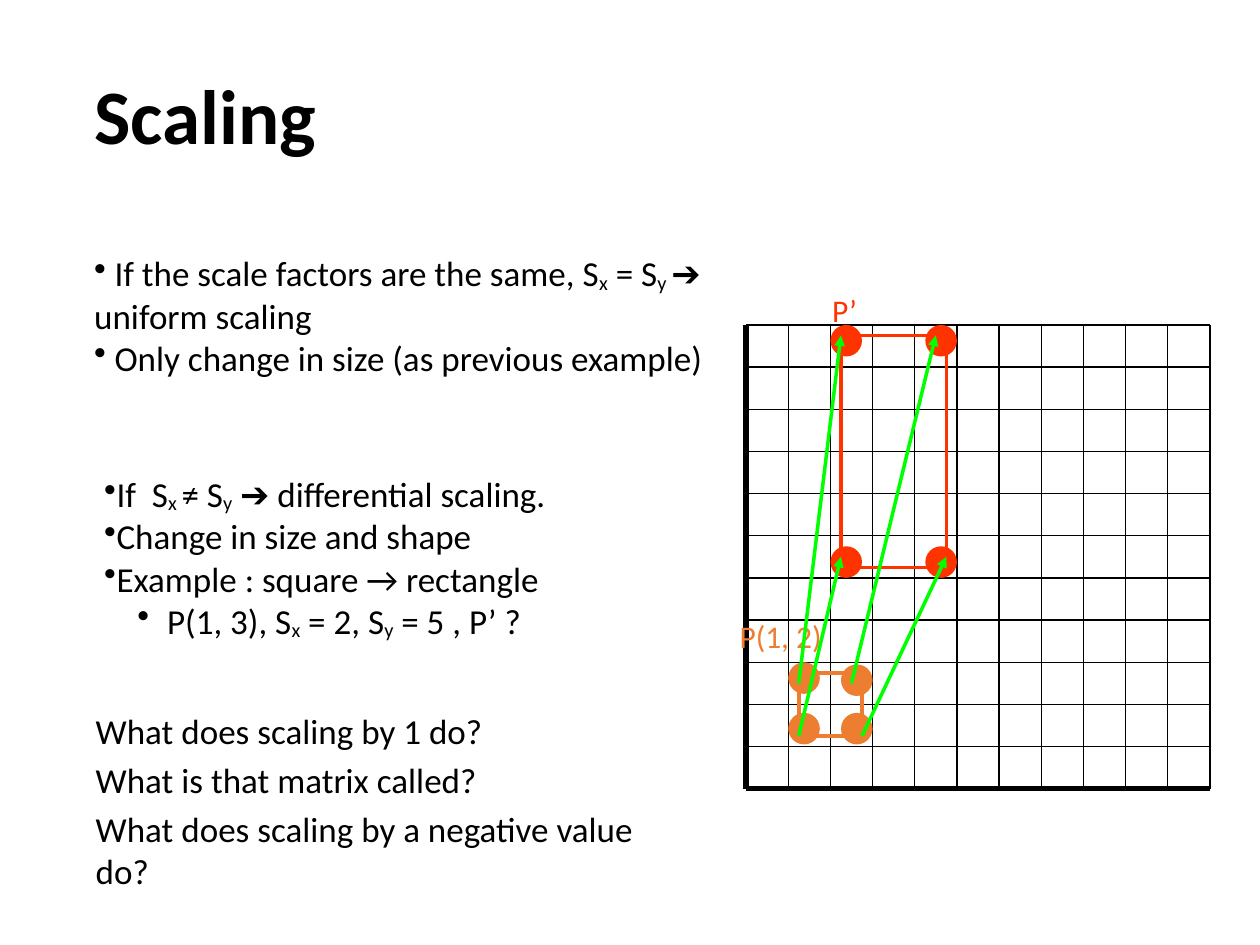
from dataclasses import dataclass

from lxml.etree import SubElement
from pptx import Presentation
from pptx.dml.color import RGBColor
from pptx.enum.shapes import MSO_CONNECTOR, MSO_SHAPE
from pptx.enum.text import MSO_ANCHOR
from pptx.oxml.ns import qn
from pptx.util import Cm, Pt


@dataclass(frozen=True)
class Theme:
    font: str = "Calibri"
    ink: str = "000000"
    before: str = "ED7D31"
    after: str = "FF3300"
    motion: str = "00FF00"
    title_size: int = 44
    body_size: int = 20
    label_size: int = 18
    grid_width: float = 0.75
    axis_width: float = 3
    outline_width: float = 2


THEME = Theme()

# Content: text between ~ marks is subscript; boxes are left, top, width, height in cm
TITLE = ("Scaling", (1.65, 0.71, 21.59, 3.18))
UNIFORM = ([
    " If the scale factors are the same, S~x~ = S~y ~➔ uniform scaling",
    " Only change in size (as previous example)",
], (1.65, 4.95, 13.39, 2.82))
DIFFERENTIAL = ([
    "If  S~x ~≠ S~y~ ➔ differential scaling.",
    "Change in size and shape",
    "Example : square → rectangle",
], (1.85, 9.4, 9.78, 3.68))
EXAMPLE = "P(1, 3), S~x~ = 2, S~y~ = 5 , P’ ?"
QUESTIONS = ([
    "What does scaling by 1 do?",
    "What is that matrix called?",
    "What does scaling by a negative value do?",
], (1.68, 14.17, 12.5, 4.01))

# Diagram: positions in grid cells from the top left corner of the grid
GRID_LEFT, GRID_TOP, CELL, CELLS = 15.04, 6.55, 0.85, 11
DOT = 0.75
FIGURES = [
    dict(label="P(1, 2)", label_box=(-0.45, 6.78, 2.58, 1.2), color=THEME.before,
         dots=[(1, 9.2), (2.25, 9.2), (1, 8), (2.25, 8.05)],
         outline=(1.25, 8.25, 1.5, 1.5)),
    dict(label="P’", label_box=(1.75, -0.96, 1.2, 1.2), color=THEME.after,
         dots=[(2, 5.25), (4.25, 5.25), (2, 0), (4.25, 0)],
         outline=(2.25, 0.25, 2.5, 5.5)),
]
MOTIONS = [
    ((1.25, 8.5), (2.25, 0.25)),
    ((2.75, 9.75), (4.75, 5.5)),
    ((1.25, 9.75), (2.25, 5.5)),
    ((2.5, 8.5), (4.5, 0.25)),
]


def grid_point(column, row):
    return Cm(GRID_LEFT + column * CELL), Cm(GRID_TOP + row * CELL)


def grid_box(column, row, width, height):
    return *grid_point(column, row), Cm(width * CELL), Cm(height * CELL)


def cm_box(box):
    return [Cm(length) for length in box]


def add_text(slide, lines, box, size, color=THEME.ink, bold=False, wrap=True):
    frame = slide.shapes.add_textbox(*box).text_frame
    frame.word_wrap = wrap
    for index, line in enumerate(lines):
        paragraph = frame.paragraphs[0] if index == 0 else frame.add_paragraph()
        font = paragraph.font
        font.name, font.size, font.bold = THEME.font, Pt(size), bold
        font.color.rgb = RGBColor.from_string(color)
        for part, words in enumerate(line.split("~")):
            if words:
                run = paragraph.add_run()
                run.text = words
                if part % 2:
                    run.font._element.set("baseline", "-10000")
    return frame


def add_bullet(paragraph, margin=0, indent=0):
    properties = paragraph._p.get_or_add_pPr()
    properties.set("marL", str(Cm(margin)))
    properties.set("indent", str(Cm(indent)))
    bullet = properties.makeelement(qn("a:buChar"), {"char": "•"})
    properties.insert_element_before(bullet, "a:tabLst", "a:defRPr", "a:extLst")


def add_line(slide, start, end, color, width, arrow=False):
    connector = slide.shapes.add_connector(
        MSO_CONNECTOR.STRAIGHT, *grid_point(*start), *grid_point(*end))
    connector.line.color.rgb = RGBColor.from_string(color)
    connector.line.width = Pt(width)
    if arrow:
        SubElement(connector.line._get_or_add_ln(), qn("a:tailEnd"), type="triangle")
    SubElement(connector._element.spPr, qn("a:effectLst"))


def add_figure(slide, figure):
    color = RGBColor.from_string(figure["color"])
    add_text(slide, [figure["label"]], grid_box(*figure["label_box"]),
             THEME.label_size, figure["color"], wrap=False)
    for column, row in figure["dots"]:
        dot = slide.shapes.add_shape(MSO_SHAPE.OVAL, *grid_box(column, row, DOT, DOT))
        dot.shadow.inherit = False
        dot.fill.solid()
        dot.fill.fore_color.rgb = color
        dot.line.fill.background()
    outline = slide.shapes.add_shape(MSO_SHAPE.RECTANGLE, *grid_box(*figure["outline"]))
    outline.shadow.inherit = False
    outline.fill.background()
    outline.line.color.rgb = color
    outline.line.width = Pt(THEME.outline_width)


def main():
    deck = Presentation()
    deck.slide_width, deck.slide_height = Cm(25.4), Cm(19.05)
    slide = deck.slides.add_slide(deck.slide_layouts[6])

    # Title
    title, title_box = TITLE
    heading = add_text(slide, [title], cm_box(title_box), THEME.title_size, bold=True)
    heading.vertical_anchor = MSO_ANCHOR.MIDDLE

    # Grid with heavy left and bottom axes
    for step in range(CELLS + 1):
        column_width = THEME.axis_width if step == 0 else THEME.grid_width
        row_width = THEME.axis_width if step == CELLS else THEME.grid_width
        add_line(slide, (step, 0), (step, CELLS), THEME.ink, column_width)
        add_line(slide, (0, step), (CELLS, step), THEME.ink, row_width)

    # Uniform scaling
    lines, box = UNIFORM
    for paragraph in add_text(slide, lines, cm_box(box), THEME.body_size).paragraphs:
        add_bullet(paragraph)

    # Square, scaled rectangle and the motion of each corner
    for figure in FIGURES:
        add_figure(slide, figure)
    for start, end in MOTIONS:
        add_line(slide, start, end, THEME.motion, THEME.outline_width, arrow=True)

    # Differential scaling with its example one level down
    lines, box = DIFFERENTIAL
    differential = add_text(slide, lines + [EXAMPLE], cm_box(box), THEME.body_size)
    *points, example = differential.paragraphs
    for paragraph in points:
        add_bullet(paragraph)
    example.level = 1
    add_bullet(example, margin=1.27, indent=-0.6)

    # Questions
    lines, box = QUESTIONS
    for paragraph in add_text(slide, lines, cm_box(box), THEME.body_size).paragraphs:
        paragraph.space_before = Pt(4)

    deck.save("out.pptx")


if __name__ == "__main__":
    main()
